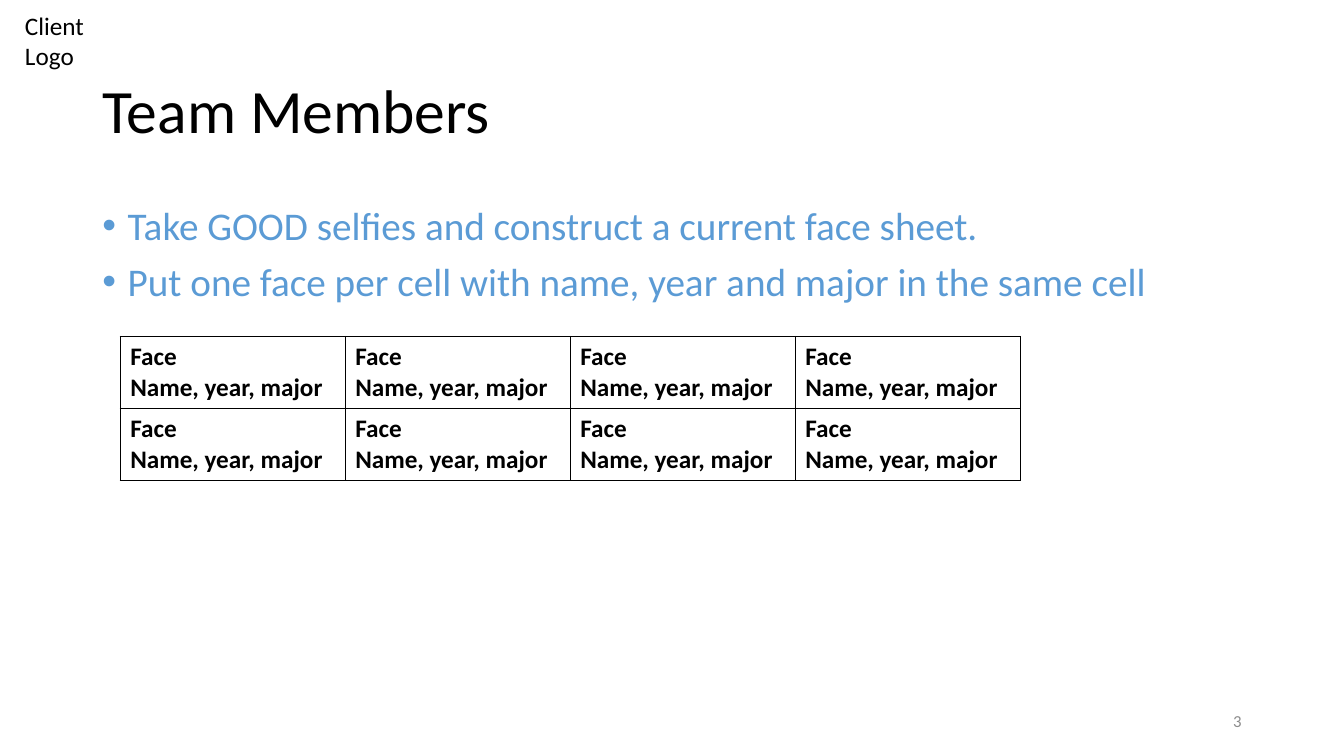
from dataclasses import dataclass

from lxml.etree import SubElement
from pptx import Presentation
from pptx.dml.color import RGBColor
from pptx.enum.text import MSO_ANCHOR as Anchor, PP_ALIGN as Align
from pptx.oxml.ns import qn
from pptx.slide import Slide
from pptx.table import _Cell as Cell
from pptx.text.text import TextFrame
from pptx.util import Cm, Pt

FONT = "Calibri"
BLACK = "000000"
BLUE = "5B9BD5"
GRAY = "8C8C8C"
ROWS, COLS = 2, 4
WIDE, HIGH = 5.67, 1.81


@dataclass
class Label:
    text: str
    left: float
    top: float
    width: float
    height: float
    size: int
    color: str = BLACK
    anchor: Anchor = Anchor.TOP
    align: Align = Align.LEFT
    lead: float = 1.0
    list: bool = False


LABELS = [
    Label("Client\vLogo", 0.38, 0.13, 2.82, 1.8, 18),
    Label("Team Members", 2.33, 1.01, 29.21, 3.68, 44, anchor=Anchor.MIDDLE, lead=0.9),
    Label(
        "Take GOOD selfies and construct a current face sheet.\n"
        "Put one face per cell with name, year and major in the same cell",
        2.33, 5.07, 29.21, 12.09, 28, BLUE, lead=0.9, list=True,
    ),
    Label("3", 23.92, 17.65, 7.62, 1.01, 12, GRAY, Anchor.MIDDLE, Align.RIGHT),
]


def paint(color: str) -> RGBColor:
    return RGBColor.from_string(color)


def style(frame: TextFrame, size: int, color: str, bold: bool = False) -> None:
    for para in frame.paragraphs:
        for run in para.runs:
            run.font.name = FONT
            run.font.size = Pt(size)
            run.font.bold = bold
            run.font.color.rgb = paint(color)


def bullet(frame: TextFrame) -> None:
    for index, para in enumerate(frame.paragraphs):
        props = para._p.get_or_add_pPr()
        props.set("marL", str(Cm(0.64)))
        props.set("indent", str(-Cm(0.64)))
        SubElement(props, qn("a:buFont"), typeface="Arial")
        SubElement(props, qn("a:buChar"), char="•")
        if index:
            para.space_before = Pt(10)


def write(slide: Slide, label: Label) -> None:
    box = slide.shapes.add_textbox(
        Cm(label.left), Cm(label.top), Cm(label.width), Cm(label.height)
    )
    frame = box.text_frame
    frame.word_wrap = True
    frame.vertical_anchor = label.anchor
    frame.text = label.text
    if label.list:
        bullet(frame)
    for para in frame.paragraphs:
        para.alignment = label.align
        para.line_spacing = label.lead
    style(frame, label.size, label.color)


def border(cell: Cell) -> None:
    props = cell._tc.get_or_add_tcPr()
    for side in ("lnL", "lnR", "lnT", "lnB"):
        line = SubElement(props, qn(f"a:{side}"), w=str(Pt(1)))
        fill = SubElement(line, qn("a:solidFill"))
        SubElement(fill, qn("a:srgbClr"), val=BLACK)


def grid(slide: Slide) -> None:
    table = slide.shapes.add_table(
        ROWS, COLS, Cm(3.03), Cm(8.48), Cm(COLS * WIDE), Cm(ROWS * HIGH)
    ).table
    table.first_row = False
    table.horz_banding = False
    for cell in table.iter_cells():
        border(cell)
        cell.fill.background()
        cell.text_frame.text = "Face\nName, year, major"
        style(cell.text_frame, 18, BLACK, bold=True)


def main() -> None:
    deck = Presentation()
    deck.slide_width, deck.slide_height = Cm(33.87), Cm(19.05)
    slide = deck.slides.add_slide(deck.slide_layouts[6])
    for label in LABELS:
        write(slide, label)
    grid(slide)
    deck.save("out.pptx")


if __name__ == "__main__":
    main()
